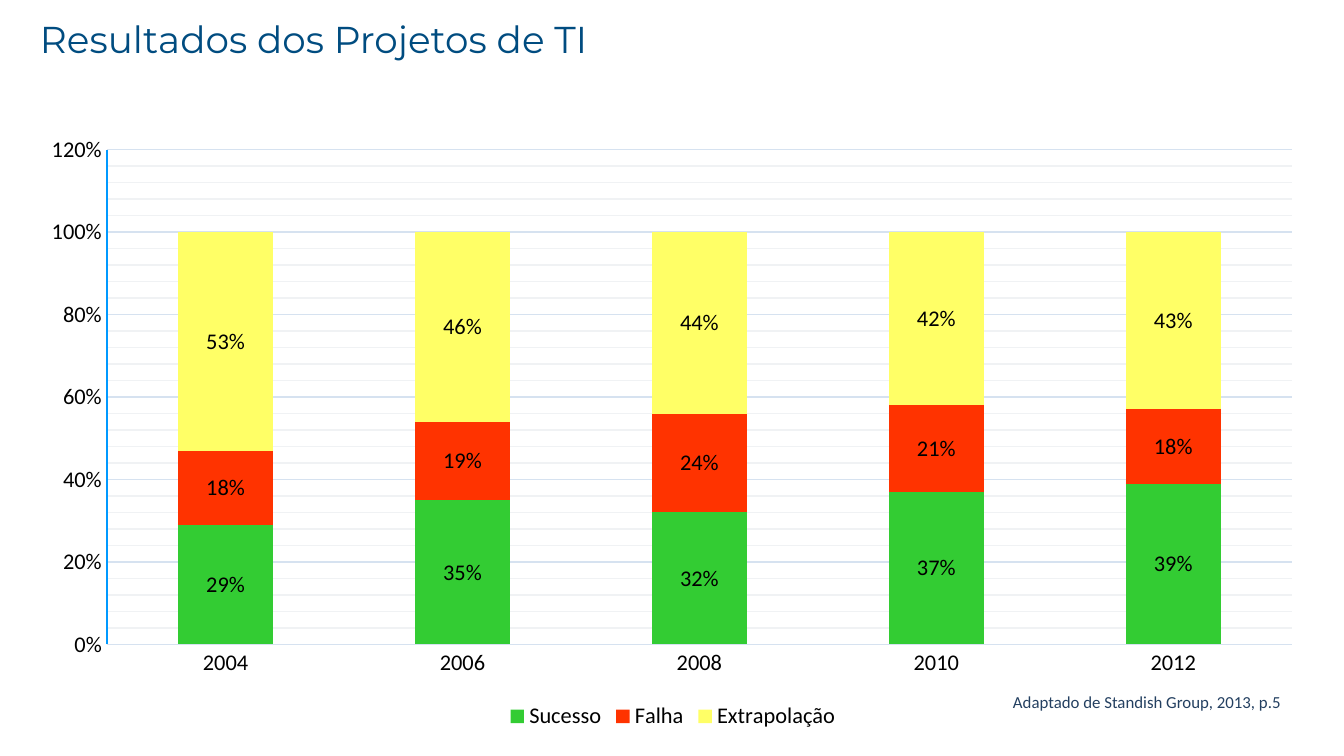
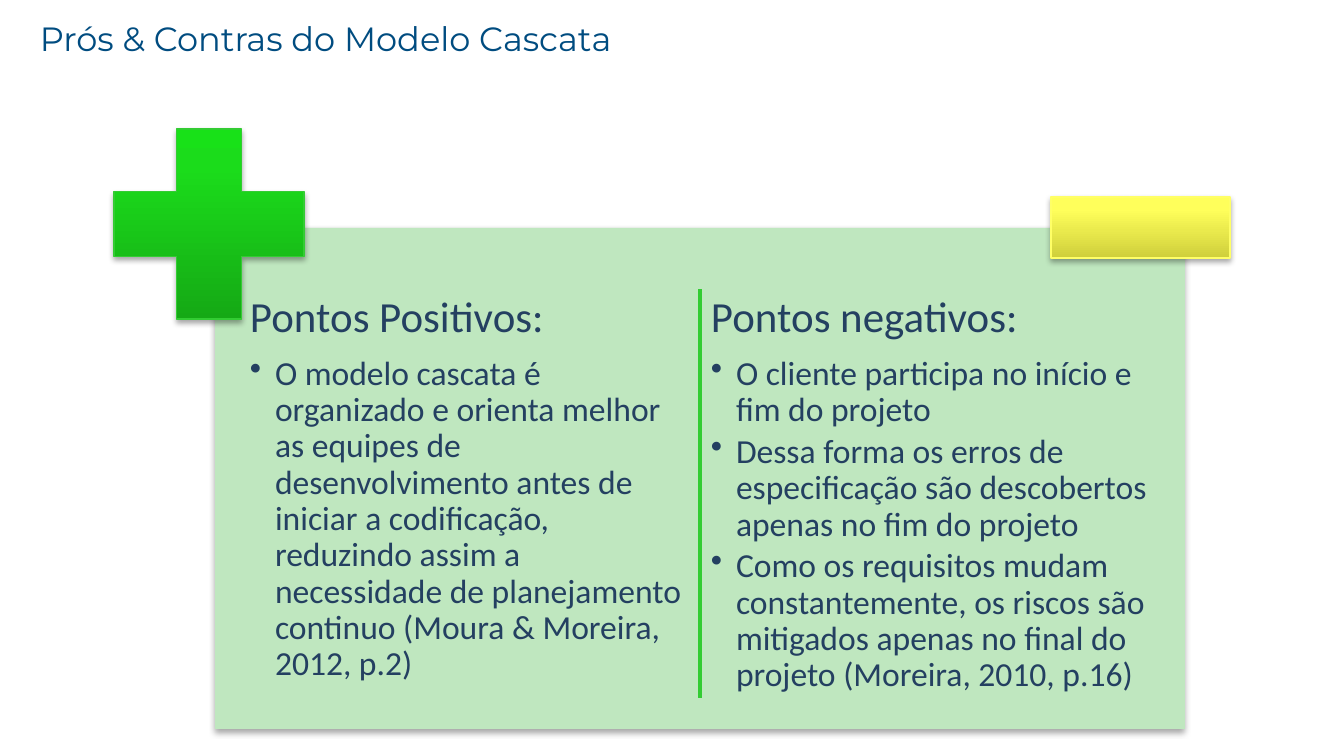
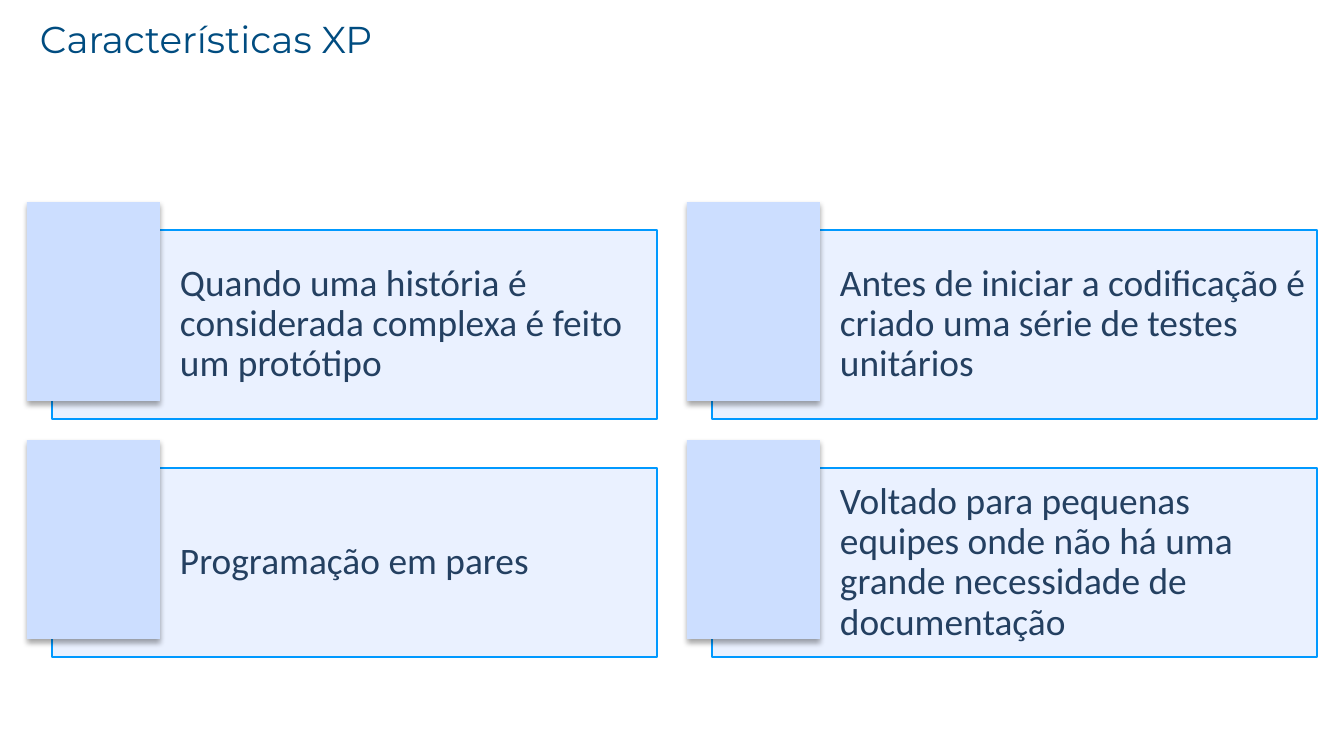
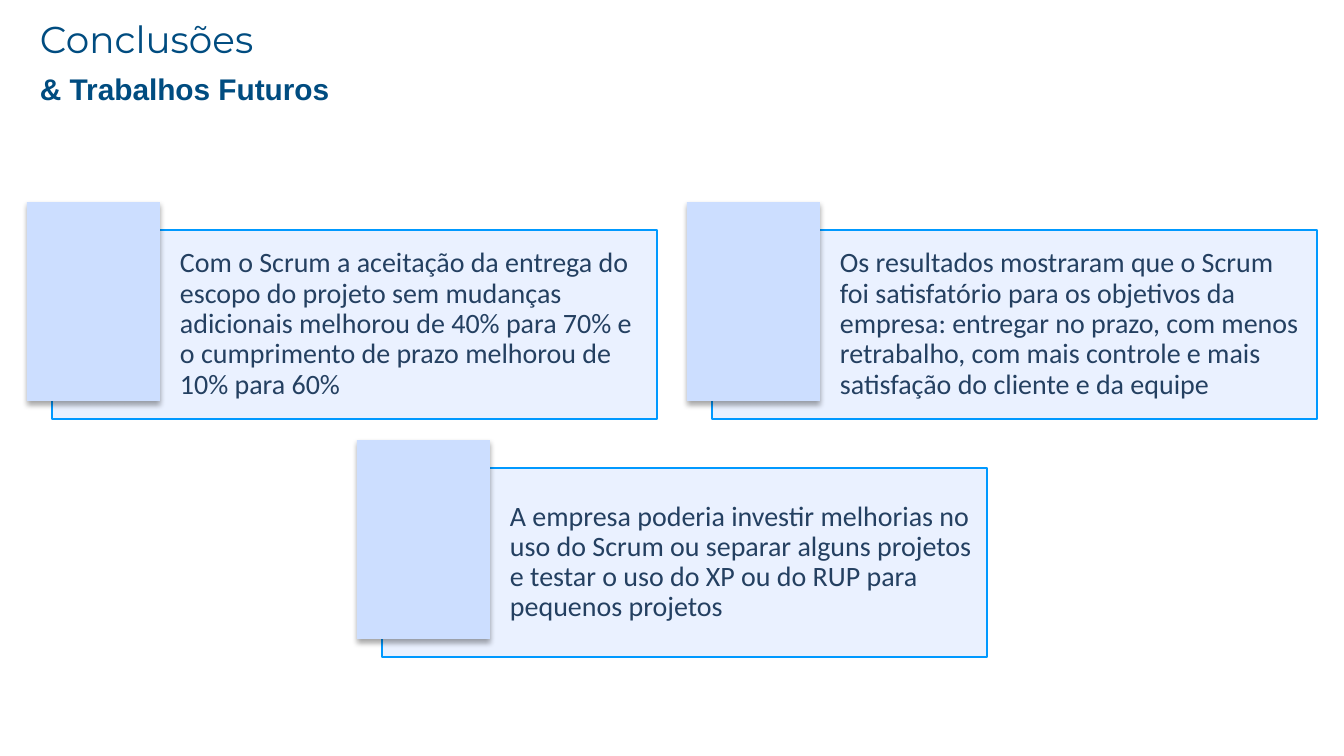
from copy import deepcopy
from pptx import Presentation
from pptx.chart.data import CategoryChartData as Data
from pptx.dml.color import RGBColor
from pptx.enum.chart import XL_CHART_TYPE as CHART, XL_LABEL_POSITION as LABEL
from pptx.enum.chart import XL_LEGEND_POSITION as LEGEND, XL_TICK_MARK as TICK
from pptx.enum.shapes import MSO_CONNECTOR as LINE, MSO_SHAPE as SHAPE
from pptx.enum.text import MSO_ANCHOR as ANCHOR, PP_ALIGN as ALIGN
from pptx.oxml import parse_xml
from pptx.oxml.ns import nsdecls, qn
from pptx.util import Pt

PX = 6804  # EMU in one px
BODY, HEAD = "Calibri", "Montserrat"
NAVY, TITLE, BLUE, PALE = "244061", "004C80", "0099FF", "CCDEFF"
GREEN, RED, YELLOW, MINT = "33CC33", "FF3300", "FFFF66", "BFE7BF"


def hue(code):
    return RGBColor.from_string(code)


def write(box, text, size=20, font=BODY, color=NAVY, bold=False, wrap=True,
          anchor=ANCHOR.MIDDLE, pad=(13, 7, 13, 7), line=None, items=(), small=18):
    frame = box.text_frame
    frame.word_wrap = wrap
    frame.vertical_anchor = anchor
    (frame.margin_left, frame.margin_top,
     frame.margin_right, frame.margin_bottom) = [n * PX for n in pad]
    for i, words in enumerate([text, *items]):
        para = frame.paragraphs[0] if i == 0 else frame.add_paragraph()
        para.alignment = ALIGN.LEFT
        if line:
            para.line_spacing = line
        if items:
            para.space_after = Pt(3 if i else 8)
        if i:
            props = para._p.get_or_add_pPr()
            props.set("marL", str(25 * PX))
            props.set("indent", str(-25 * PX))
            props.append(parse_xml(f'<a:buChar {nsdecls("a")} char="•"/>'))
        run = para.add_run()
        run.text = words
        run.font.size = Pt(small if i else size)
        run.font.name = font
        run.font.bold = bold
        run.font.color.rgb = hue(color)


deck = Presentation()
deck.slide_width, deck.slide_height = 1344 * PX, 756 * PX
raised = []  # shapes that cast a shadow

# Slides and titles
pages = []
for name, size in (("Resultados dos Projetos de TI", 20),
                   ("Prós & Contras do Modelo Cascata", 18),
                   ("Características XP", 20),
                   ("Conclusões", 20)):
    page = deck.slides.add_slide(deck.slide_layouts[6]).shapes
    head = page.add_textbox(*[n * PX for n in (27, 15, 1111, 47)])
    write(head, name, size=size, font=HEAD, color=TITLE)
    pages.append(page)
results, model, traits, ending = pages

# Slide 1: stacked columns
data = Data(number_format="0%")
data.categories = ["2004", "2006", "2008", "2010", "2012"]
data.add_series("Sucesso", (0.29, 0.35, 0.32, 0.37, 0.39))
data.add_series("Falha", (0.18, 0.19, 0.24, 0.21, 0.18))
data.add_series("Extrapolação", (0.53, 0.46, 0.44, 0.42, 0.43))
chart = results.add_chart(CHART.COLUMN_STACKED,
                          *[n * PX for n in (27, 124, 1292, 611)], data).chart
chart.has_title = False
chart.has_legend = True
chart.legend.position = LEGEND.BOTTOM
chart.legend.include_in_layout = False
plot = chart.plots[0]
plot.gap_width, plot.overlap = 150, 100
plot.vary_by_categories = False

for series, color in zip(plot.series, (GREEN, RED, YELLOW)):
    series.format.fill.solid()
    series.format.fill.fore_color.rgb = hue(color)
    tags = series.data_labels
    tags.show_value = True
    tags.number_format, tags.number_format_is_linked = "0%", False
    tags.position = LABEL.CENTER

years, rates = chart.category_axis, chart.value_axis
for axis in (years, rates):
    axis.major_tick_mark = axis.minor_tick_mark = TICK.NONE
years.format.line.fill.background()
rates.format.line.color.rgb = hue(BLUE)
rates.format.line.width = Pt(0.75)
rates.minimum_scale, rates.maximum_scale = 0, 1.2
rates.major_unit, rates.minor_unit = 0.2, 0.04
rates.tick_labels.number_format = "0%"
rates.tick_labels.number_format_is_linked = False
rates.has_major_gridlines = rates.has_minor_gridlines = True
grid = rates.major_gridlines.format.line
grid.color.rgb = hue("D6E2F0")
grid.width = Pt(0.75)

for part in (chart, chart.legend, years.tick_labels, rates.tick_labels,
             *[series.data_labels for series in plot.series]):
    part.font.size = Pt(12)
    part.font.name = BODY
    part.font.color.rgb = hue("000000")

# Pale minor grid, and a fixed place for the plot inside the chart
area = chart._chartSpace.find(".//" + qn("c:plotArea"))
area.find(".//" + qn("c:minorGridlines")).append(parse_xml(
    f'<c:spPr {nsdecls("c", "a")}><a:ln w="{Pt(0.75)}"><a:solidFill>'
    f'<a:srgbClr val="{hue("F0F2F4")}"/></a:solidFill></a:ln></c:spPr>'))
for old in area.findall(qn("c:layout")):
    area.remove(old)
area.insert(0, parse_xml(
    f'<c:layout {nsdecls("c")}><c:manualLayout><c:layoutTarget val="inner"/>'
    '<c:xMode val="edge"/><c:yMode val="edge"/><c:x val="0.062"/><c:y val="0.042"/>'
    '<c:w val="0.917"/><c:h val="0.81"/></c:manualLayout></c:layout>'))

credit = results.add_textbox(*[n * PX for n in (1000, 685, 297, 34)])
write(credit, "Adaptado de Standish Group, 2013, p.5", size=9, wrap=False,
      anchor=ANCHOR.TOP)

# Slide 2: panel with two lists
panel = model.add_shape(SHAPE.RECTANGLE, *[n * PX for n in (215, 228, 970, 501)])
panel.fill.solid()
panel.fill.fore_color.rgb = hue(MINT)
panel.line.fill.background()
raised.append(panel)

for left, name, items in (
    (243, "Pontos Positivos:", [
        "O modelo cascata é organizado e orienta melhor as equipes de desenvolvimento "
        "antes de iniciar a codificação, reduzindo assim a necessidade de planejamento "
        "continuo (Moura & Moreira, 2012, p.2)"]),
    (704, "Pontos negativos:", [
        "O cliente participa no início e fim do projeto",
        "Dessa forma os erros de especificação são descobertos apenas no fim do projeto",
        "Como os requisitos mudam constantemente, os riscos são mitigados apenas no "
        "final do projeto (Moreira, 2010, p.16)"]),
):
    side = model.add_textbox(*[n * PX for n in (left, 288, 450, 429)])
    write(side, name, size=23, anchor=ANCHOR.TOP, pad=[7] * 4, line=0.9, items=items)

# Plus and minus signs
for kind, spot, edge, tones in (
    (SHAPE.CROSS, (114, 129, 190, 190), GREEN, ("15A915", "1BDC1B", "18E118")),
    (SHAPE.RECTANGLE, (1051, 197, 179, 61), YELLOW, ("CFCF3B", "FFFF5B", "FFFF5D")),
):
    sign = model.add_shape(kind, *[n * PX for n in spot])
    if kind == SHAPE.CROSS:
        sign.adjustments[0] = 0.33
    sign.fill.gradient()
    sign.fill.gradient_angle = 90
    stops = sign._element.spPr.find(".//" + qn("a:gsLst"))
    stops.append(deepcopy(stops[0]))
    for stop, tone, place in zip(sign.fill.gradient_stops, tones, (0, 0.8, 1)):
        stop.color.rgb = hue(tone)
        stop.position = place
    sign.line.color.rgb = hue(edge)
    sign.line.width = Pt(0.75)
    raised.append(sign)

rule = model.add_connector(LINE.STRAIGHT, *[n * PX for n in (700, 289, 700, 698)])
rule.line.color.rgb = hue(GREEN)
rule.line.width = Pt(2)
rule._element.spPr.append(parse_xml(f'<a:effectLst {nsdecls("a")}/>'))

# Slides 3 and 4: cards placed by column and row
for page, size, pad, cards in (
    (traits, 20, 11, (
        (0, 0, "Quando uma história é considerada complexa é feito um protótipo"),
        (1, 0, "Antes de iniciar a codificação é criado uma série de testes unitários"),
        (0, 1, "Programação em pares"),
        (1, 1, "Voltado para pequenas equipes onde não há uma grande necessidade de "
               "documentação"))),
    (ending, 15, 8, (
        (0, 0, "Com o Scrum a aceitação da entrega do escopo do projeto sem mudanças "
               "adicionais melhorou de 40% para 70% e o cumprimento de prazo melhorou "
               "de 10% para 60%"),
        (1, 0, "Os resultados mostraram que o Scrum foi satisfatório para os objetivos "
               "da empresa: entregar no prazo, com menos retrabalho, com mais controle "
               "e mais satisfação do cliente e da equipe"),
        (0.5, 1, "A empresa poderia investir melhorias no uso do Scrum ou separar alguns "
                 "projetos e testar o uso do XP ou do RUP para pequenos projetos"))),
):
    for col, row, text in cards:
        x, y = 52 + int(660 * col), 230 + 238 * row
        card = page.add_shape(SHAPE.RECTANGLE, *[n * PX for n in (x, y, 605, 189)])
        card.shadow.inherit = False
        card.line.color.rgb = hue(BLUE)
        card.line.width = Pt(0.75)
        tab = page.add_shape(SHAPE.RECTANGLE,
                             *[n * PX for n in (x - 25, y - 28, 133, 199)])
        tab.line.fill.background()
        for shape in (card, tab):
            shape.fill.solid()
            shape.fill.fore_color.rgb = hue(PALE)
        tint = card._element.spPr.find(qn("a:solidFill"))[0]
        tint.append(parse_xml(f'<a:alpha {nsdecls("a")} val="40000"/>'))
        write(card, text, size=size, pad=(128, pad, pad, pad), line=0.9)
        raised.append(tab)

# Slide 4: second title line
sub = ending.add_textbox(*[n * PX for n in (27, 71, 1111, 36)])
write(sub, "& Trabalhos Futuros", size=16, font="Arial", color=TITLE, bold=True)

# Soft shadow below the raised shapes
for shape in raised:
    shape.shadow.inherit = False
    shape._element.spPr.find(qn("a:effectLst")).append(parse_xml(
        f'<a:outerShdw {nsdecls("a")} blurRad="{Pt(3.1)}" dist="{Pt(1.8)}" '
        'dir="5400000" rotWithShape="0"><a:srgbClr val="000000">'
        '<a:alpha val="35000"/></a:srgbClr></a:outerShdw>'))

deck.save("out.pptx")
